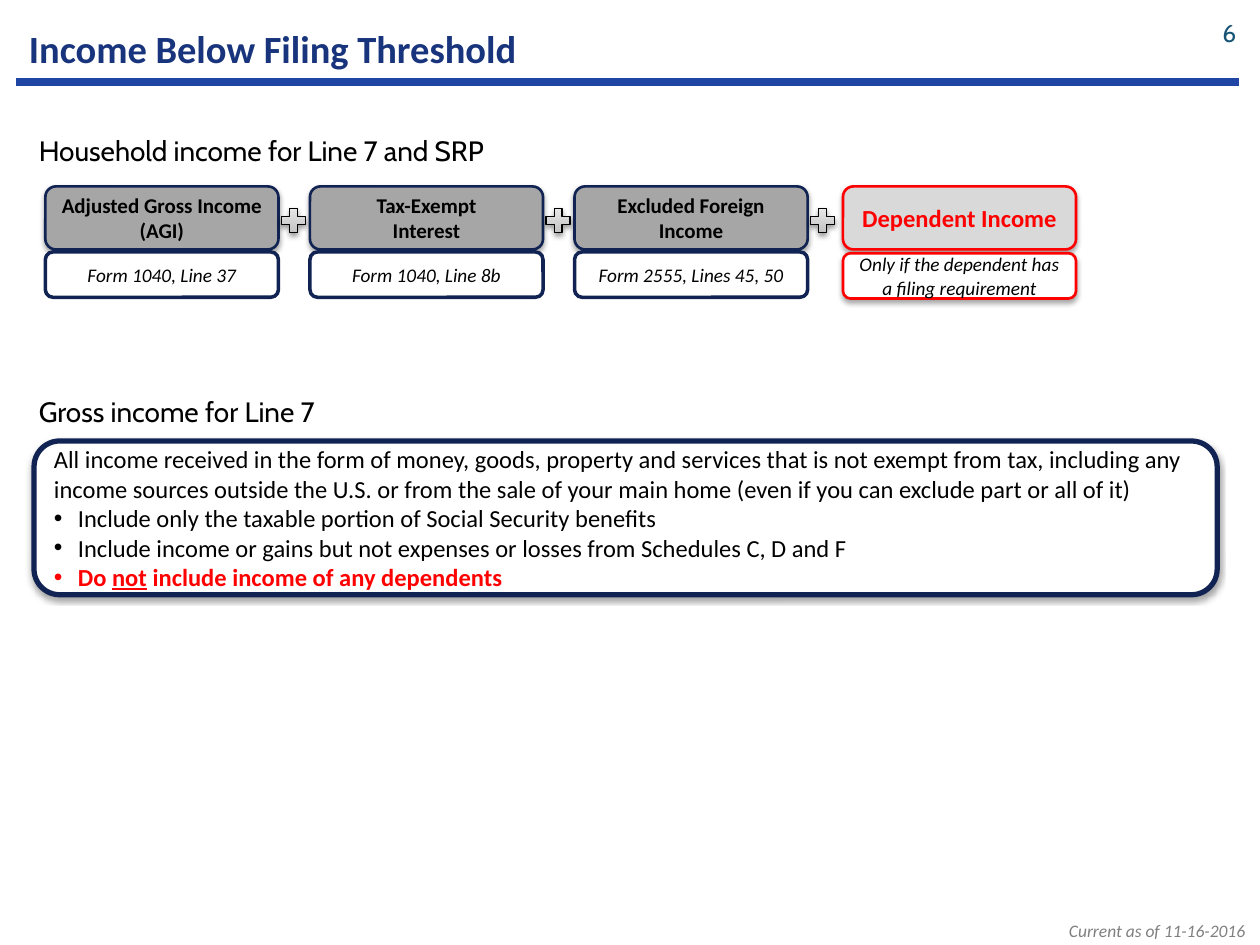
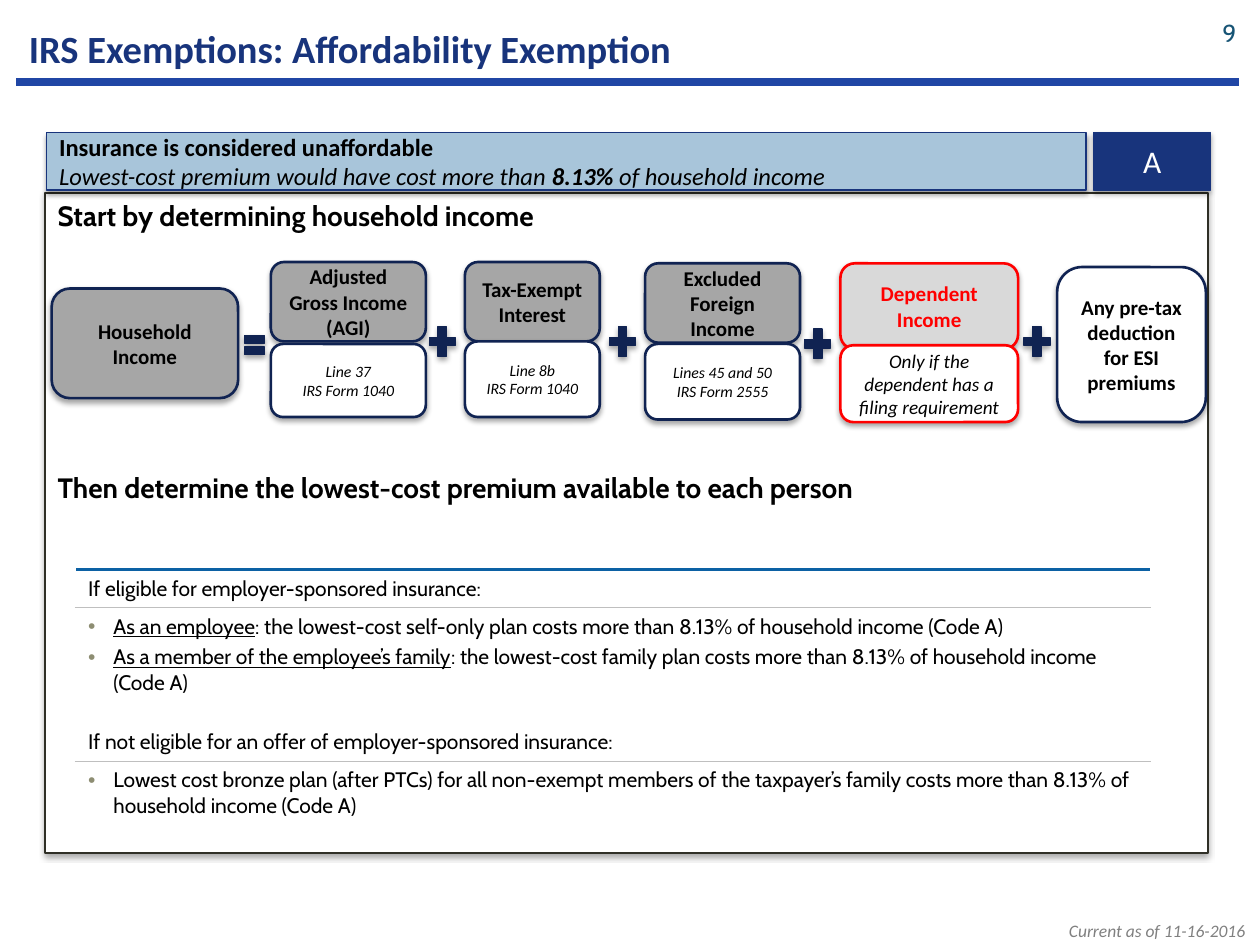
"""Builds two slides on household income and the affordability exemption."""
from dataclasses import dataclass, replace
from typing import NamedTuple

from lxml import etree
from pptx import Presentation
from pptx.dml.color import RGBColor
from pptx.enum.shapes import MSO_CONNECTOR, MSO_SHAPE
from pptx.enum.text import MSO_ANCHOR, MSO_AUTO_SIZE, PP_ALIGN
from pptx.oxml.ns import qn
from pptx.util import Emu, Inches, Pt

RECT, ROUND = MSO_SHAPE.RECTANGLE, MSO_SHAPE.ROUNDED_RECTANGLE
PLUS, EQUAL = MSO_SHAPE.MATH_PLUS, MSO_SHAPE.MATH_EQUAL
LEFT, CENTER, RIGHT = PP_ALIGN.LEFT, PP_ALIGN.CENTER, PP_ALIGN.RIGHT
TOP, MIDDLE = MSO_ANCHOR.TOP, MSO_ANCHOR.MIDDLE

SLIDE_W, SLIDE_H = Inches(10), Inches(7.5)
COL, ROW = SLIDE_W / 100, SLIDE_H / 75

BLACK, WHITE, RED = "000000", "FFFFFF", "FF0000"
NAVY, TITLE_BLUE, RULE_BLUE = "102352", "18347C", "2046A5"
GREY, PALE_GREY, HAIRLINE = "A6A6A6", "D9D9D9", "BFBFBF"


class Area(NamedTuple):
    """A place on the slide, in grid columns and rows."""
    col: float
    row: float
    cols: float
    rows: float

    def emu(self) -> tuple:
        return (Emu(round(self.col * COL)), Emu(round(self.row * ROW)),
                Emu(round(self.cols * COL)), Emu(round(self.rows * ROW)))


class Span(NamedTuple):
    """A stretch of text with its own marks; None keeps the paragraph's."""
    text: str
    bold: bool | None = None
    italic: bool | None = None
    underline: bool | None = None


@dataclass(frozen=True)
class Style:
    """How a paragraph is set."""
    size: float
    color: str = BLACK
    font: str = "Calibri"
    bold: bool = False
    italic: bool = False
    align: PP_ALIGN = LEFT
    before: float = 0
    after: float = 0
    bullet: str = ""
    indent: float = 0.19


class Line(NamedTuple):
    """A paragraph: its spans and style."""
    spans: tuple
    style: Style


@dataclass(frozen=True)
class Look:
    """Fill, outline and shadow of a box."""
    fill: str
    outline: str = NAVY
    width: float = 1.5
    shadow: int = 35


@dataclass(frozen=True)
class Term:
    """One part of the income sum: a heading box over a source box."""
    head: Area
    source: Area
    heading: tuple
    origin: tuple
    head_style: Style
    origin_style: Style
    head_look: Look = Look(GREY)
    origin_look: Look = Look(WHITE)


HEAD = Style(12, bold=True, align=CENTER)
ORIGIN = Style(11, italic=True, align=CENTER)
SMALL_ORIGIN = replace(ORIGIN, size=9)
RED_HEAD = replace(HEAD, color=RED)
SECTION = Style(16, font="Cabin")
TABLE_TEXT = Style(12, font="Cabin", after=3)
TABLE_ITEM = replace(TABLE_TEXT, bullet="8D8D72", indent=0.2)
RED_LOOKS = (Look(PALE_GREY, RED), Look(WHITE, RED))
NAVY_SIGN = Look(NAVY, width=0.75)
GREY_SIGN = Look("BDBDBD", BLACK, 0.75, 38)
DEPENDENT_NOTE = ("Only if the dependent has a filing requirement",)


def rgb(color: str) -> RGBColor:
    """Turn a hex string into a colour."""
    return RGBColor.from_string(color)


def lines(texts: tuple, style: Style) -> list:
    """Make one plain paragraph of each text."""
    return [Line((Span(text),), style) for text in texts]


def add_bullet(paragraph, style: Style) -> None:
    """Give a paragraph a hanging round bullet."""
    props = paragraph._p.get_or_add_pPr()
    props.set("marL", str(Inches(style.indent)))
    props.set("indent", str(-Inches(style.indent)))
    color = etree.SubElement(props, qn("a:buClr"))
    etree.SubElement(color, qn("a:srgbClr"), val=style.bullet)
    etree.SubElement(props, qn("a:buFont"), typeface="Arial")
    etree.SubElement(props, qn("a:buChar"), char="•")


def write(frame, content: list) -> None:
    """Write paragraphs into a text frame."""
    for index, (spans, style) in enumerate(content):
        paragraph = frame.add_paragraph() if index else frame.paragraphs[0]
        if style.bullet:
            add_bullet(paragraph, style)
        paragraph.alignment = style.align
        paragraph.space_before = Pt(style.before)
        paragraph.space_after = Pt(style.after)
        font = paragraph.font
        font.name, font.size = style.font, Pt(style.size)
        font.bold, font.italic = style.bold, style.italic
        font.color.rgb = rgb(style.color)
        for span in spans:
            run = paragraph.add_run()
            run.text = span.text
            for mark in ("bold", "italic", "underline"):
                value = getattr(span, mark)
                if value is not None:
                    setattr(run.font, mark, value)


def add_label(slide, area: Area, content: list, anchor=TOP) -> None:
    """Add a wrapping text box."""
    frame = slide.shapes.add_textbox(*area.emu()).text_frame
    frame.word_wrap, frame.vertical_anchor = True, anchor
    write(frame, content)


def add_box(slide, kind, area: Area, look: Look, content: list = (), anchor=MIDDLE):
    """Add a preset shape with fill, outline, shadow and text."""
    box = slide.shapes.add_shape(kind, *area.emu())
    box.fill.solid()
    box.fill.fore_color.rgb = rgb(look.fill)
    box.line.color.rgb = rgb(look.outline)
    box.line.width = Pt(look.width)
    box.shadow.inherit = False
    if look.shadow:
        effects = box._element.spPr.find(qn("a:effectLst"))
        shade = etree.SubElement(effects, qn("a:outerShdw"), blurRad=str(Pt(3.1)),
                                 dist=str(Pt(1.8)), dir="5400000", rotWithShape="0")
        color = etree.SubElement(shade, qn("a:srgbClr"), val=BLACK)
        etree.SubElement(color, qn("a:alpha"), val=str(look.shadow * 1000))
    box.text_frame.word_wrap, box.text_frame.vertical_anchor = True, anchor
    write(box.text_frame, content)
    return box


def add_term(slide, term: Term) -> None:
    """Draw a heading box and its source box."""
    add_box(slide, ROUND, term.head, term.head_look, lines(term.heading, term.head_style))
    add_box(slide, ROUND, term.source, term.origin_look, lines(term.origin, term.origin_style))


def add_grey_plus(slide, area: Area) -> None:
    """Draw a plus sign shaded from bottom to top."""
    fill = add_box(slide, PLUS, area, GREY_SIGN).fill
    fill.gradient()
    fill.gradient_angle = 90
    for stop, color in zip(fill.gradient_stops, ("BDBDBD", "EEEEEE")):
        stop.color.rgb = rgb(color)


def add_page(deck, title: str, number: str):
    """Add a slide with title, rule, page number and date line."""
    slide = deck.slides.add_slide(deck.slide_layouts[5])
    add_label(slide, Area(59.7, 72.5, 40.1, 2.7),
              lines(("Current as of 11-16-2016",), Style(10, "808080", italic=True, align=RIGHT)))
    start, y, length, _ = Area(1.3, 6.5, 97, 0).emu()
    rule = slide.shapes.add_connector(MSO_CONNECTOR.STRAIGHT, start, y, start + length, y)
    rule.line.color.rgb, rule.line.width = rgb(RULE_BLUE), Pt(4.75)
    etree.SubElement(rule._element.spPr, qn("a:effectLst"))
    heading = slide.shapes.title
    heading.left, heading.top, heading.width, heading.height = Area(1.3, 1, 90, 5.7).emu()
    heading.text_frame.auto_size = MSO_AUTO_SIZE.NONE
    heading.text_frame.vertical_anchor = MIDDLE
    write(heading.text_frame, lines((title,), Style(22, TITLE_BLUE, bold=True)))
    add_label(slide, Area(94, 0.6, 5.1, 4),
              lines((number,), Style(14, "175475", "Cabin", align=RIGHT)), MIDDLE)
    return slide


def set_border(cell, side: str, color: str, width: float, place: int) -> None:
    """Draw one border of a table cell."""
    edge = etree.Element(qn(f"a:{side}"), w=str(Pt(width)))
    fill = etree.SubElement(edge, qn("a:solidFill"))
    etree.SubElement(fill, qn("a:srgbClr"), val=color)
    cell._tc.get_or_add_tcPr().insert(place, edge)


def add_premium_table(slide) -> None:
    """Add the table of premium rules by eligibility."""
    rows = (
        (2.7, lines(("If eligible for employer-sponsored insurance:",), TABLE_TEXT)),
        (9.2, [Line((Span(who, underline=True),
                     Span(f": the lowest-cost {plan} plan costs more than 8.13% "
                          "of household income (Code A)")), TABLE_ITEM)
               for who, plan in (("As an employee", "self-only"),
                                 ("As a member of the employee’s family", "family"))]),
        (2.7, lines(("If not eligible for an offer of employer-sponsored insurance:",), TABLE_TEXT)),
        (5.3, lines(("Lowest cost bronze plan (after PTCs) for all non-exempt members of the "
                     "taxpayer’s family costs more than 8.13% of household income (Code A)",),
                    TABLE_ITEM)),
    )
    area = Area(6, 45.2, 85.3, sum(height for height, _ in rows))
    table = slide.shapes.add_table(len(rows), 1, *area.emu()).table
    table.first_row = table.horz_banding = False
    hairline, none = (HAIRLINE, 0.5), (WHITE, 0.5)
    for index, (height, content) in enumerate(rows):
        table.rows[index].height = Emu(round(height * ROW))
        cell = table.cell(index, 0)
        cell.fill.solid()
        cell.fill.fore_color.rgb = rgb(WHITE)
        write(cell.text_frame, content)
        is_item = index % 2
        top = hairline if is_item else none if index else ("0C61A4", 1.5)
        set_border(cell, "lnT", *top, 0)
        set_border(cell, "lnB", *(none if is_item else hairline), 1)


def build_threshold(deck) -> None:
    """Build the slide on income below the filing threshold."""
    slide = add_page(deck, "Income Below Filing Threshold", "6")
    for row, text in ((10.1, "Household income for Line 7 and SRP"),
                      (30.8, "Gross income for Line 7")):
        add_label(slide, Area(2.1, row, 90, 5.5), lines((text,), SECTION))
    parts = ((("Adjusted Gross Income (AGI)",), ("Form 1040, Line 37",)),
             (("Tax-Exempt", "Interest"), ("Form 1040, Line 8b",)),
             (("Excluded Foreign Income",), ("Form 2555, Lines 45, 50",)))
    pitch = 21
    for index, (heading, origin) in enumerate(parts):
        col = 3.6 + pitch * index
        add_term(slide, Term(Area(col, 14.8, 18.5, 5), Area(col, 20, 18.5, 3.6), heading, origin,
                             HEAD, ORIGIN, origin_look=Look(WHITE, width=2, shadow=0)))
        add_grey_plus(slide, Area(22 + pitch * index, 16.2, 2.6, 2.6))
    add_term(slide, Term(Area(66.9, 14.8, 18.5, 5), Area(66.9, 20.1, 18.5, 3.6),
                         ("Dependent Income",), DEPENDENT_NOTE, replace(RED_HEAD, size=14),
                         ORIGIN, *RED_LOOKS))
    body = Style(14)
    item = replace(body, bullet=BLACK)
    warning = replace(item, color=RED, bold=True, bullet=RED)
    add_box(slide, ROUND, Area(2.7, 35, 93.9, 12.2), Look(WHITE, width=3), [
        *lines(("All income received in the form of money, goods, property and services that is "
                "not exempt from tax, including any income sources outside the U.S. or from the "
                "sale of your main home (even if you can exclude part or all of it)",), body),
        *lines(("Include only the taxable portion of Social Security benefits",
                "Include income or gains but not expenses or losses from Schedules C, D and F"),
               item),
        Line((Span("Do "), Span("not", underline=True), Span(" include income of any dependents")),
             warning)])


def build_affordability(deck) -> None:
    """Build the slide on the affordability exemption."""
    slide = add_page(deck, "IRS Exemptions: Affordability Exemption", "9")
    step = replace(SECTION, bold=True)
    add_box(slide, RECT, Area(3.6, 15.3, 92.3, 52.4), Look(WHITE, "2F2F26", 1), [
        *lines(("Start by determining household income",), step),
        *lines(("Then determine the lowest-cost premium available to each person",),
               replace(step, before=136))], TOP)
    add_premium_table(slide)
    banner = Style(14)
    add_box(slide, RECT, Area(3.7, 10.5, 82.5, 4.6), Look("A8C5DA", TITLE_BLUE, 0.75), [
        *lines(("Insurance is considered unaffordable",), replace(banner, bold=True)),
        Line((Span("Lowest-cost premium would have cost more than "), Span("8.13% ", bold=True),
              Span("of household income")), replace(banner, italic=True))])
    add_box(slide, RECT, Area(86.8, 10.5, 9.3, 4.6), Look(TITLE_BLUE, TITLE_BLUE, 0.75),
            lines(("A",), Style(18, WHITE, align=CENTER)))
    for term in (
        Term(Area(21.5, 20.8, 12.3, 6.3), Area(21.5, 27.3, 12.3, 5.8),
             ("Adjusted Gross Income (AGI)",), ("Line 37", "IRS Form 1040"), HEAD, SMALL_ORIGIN),
        Term(Area(36.9, 20.8, 10.7, 6.3), Area(36.9, 27.1, 10.7, 6),
             ("Tax-Exempt", "Interest"), ("Line 8b", "IRS Form 1040"), HEAD, SMALL_ORIGIN),
        Term(Area(51.2, 20.9, 12.3, 6.3), Area(51.2, 27.3, 12.3, 6),
             ("Excluded Foreign Income",), ("Lines 45 and 50", "IRS Form 2555"), HEAD, SMALL_ORIGIN),
        Term(Area(66.7, 20.9, 14.1, 6.8), Area(66.7, 27.4, 14.1, 6.1),
             ("Dependent Income",), DEPENDENT_NOTE, RED_HEAD, ORIGIN, *RED_LOOKS),
    ):
        add_term(slide, term)
    add_box(slide, ROUND, Area(4.1, 22.9, 14.8, 8.7), Look(GREY), lines(("Household Income",), HEAD))
    add_box(slide, ROUND, Area(83.9, 21.2, 11.8, 12.3), Look(WHITE),
            lines(("Any pre-tax deduction for ESI premiums",), HEAD))
    add_box(slide, EQUAL, Area(19.1, 26.1, 2.2, 2.6), NAVY_SIGN)
    for col, row in ((33.7, 25.5), (48, 25.5), (63.5, 25.7), (80.9, 25.5)):
        add_box(slide, PLUS, Area(col, row, 2.8, 3.2), NAVY_SIGN)


def main() -> None:
    """Build and save the presentation."""
    deck = Presentation()
    deck.slide_width, deck.slide_height = SLIDE_W, SLIDE_H
    build_threshold(deck)
    build_affordability(deck)
    deck.save("out.pptx")


if __name__ == "__main__":
    main()
